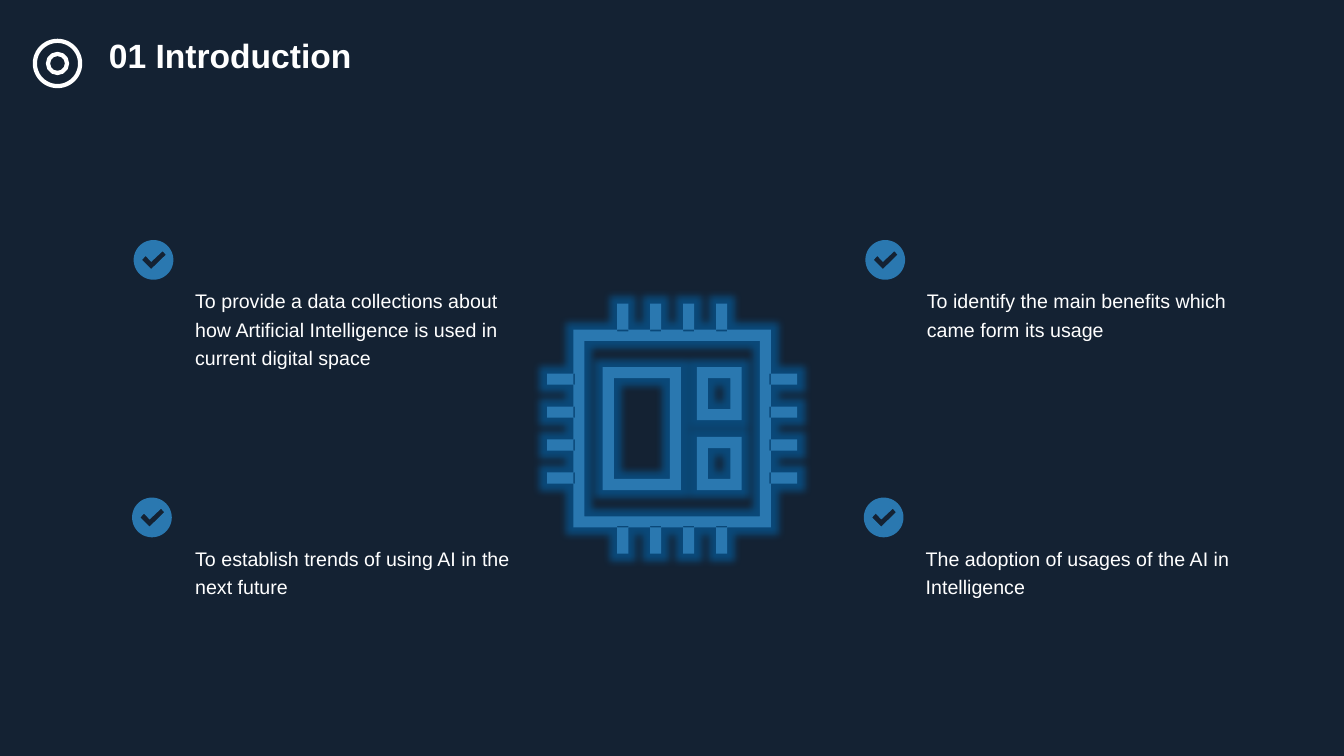
from dataclasses import dataclass
from math import cos, pi, sin

from lxml import etree
from pptx import Presentation
from pptx.dml.color import RGBColor
from pptx.enum import shapes, text
from pptx.oxml import ns
from pptx.util import Cm, Pt


@dataclass(frozen=True)
class Theme:
    background: RGBColor = RGBColor(0x14, 0x22, 0x33)
    accent: RGBColor = RGBColor(0x2A, 0x78, 0xB0)
    ink: RGBColor = RGBColor(0xFF, 0xFF, 0xFF)
    glow: str = "0070C0"
    glow_alpha: int = 50
    font: str = "Arial"
    title_size: int = 24
    body_size: int = 14
    spacing: float = 1.2


THEME = Theme()
TITLE = "01 Introduction"
TITLE_BOX = (2.49, 0.56, 15.19, 1.47)
RINGS = [(1.45, 1.6, 1.14), (1.45, 1.6, 0.48)]

AIMS = [
    ("To provide a data collections about how Artificial Intelligence is used in current digital space",
     3.37, 4.67, 6.05, 2.41),
    ("To establish trends of using AI in the next future", 3.33, 4.67, 12.54, 1.68),
    ("To identify the main benefits which came form its usage", 21.81, 23.11, 6.05, 1.68),
    ("The adoption of usages of the AI in Intelligence", 21.77, 23.08, 12.54, 1.68),
]
AIM_WIDTH = 8.64
BADGE = 1.0
TICK = [(-0.06, 0.23), (-0.29, 0), (-0.2, -0.1), (-0.06, 0.05), (0.23, -0.22), (0.31, -0.13)]

CHIP_CENTER = (16.94, 10.8)
CHIP_FRAMES = [
    (-2.49, -2.49, 4.98, 4.98),
    (-1.75, -1.55, 1.97, 3.1),
    (0.62, -1.55, 1.13, 1.34),
    (0.62, 0.21, 1.13, 1.34),
]
STROKE = 0.28
PIN_COUNT, PIN_PITCH, PIN_LENGTH, PIN_REACH = 4, 0.83, 0.7, 3.15


def rectangle(x, y, w, h):
    return [(x, y), (x + w, y), (x + w, y + h), (x, y + h)]


def circle(radius, steps=72):
    return [(radius * cos(2 * pi * i / steps), radius * sin(2 * pi * i / steps)) for i in range(steps)]


def chip_outlines():
    outlines = []
    for x, y, w, h in CHIP_FRAMES:
        outlines.append(rectangle(x, y, w, h))
        outlines.append(rectangle(x + STROKE, y + STROKE, w - 2 * STROKE, h - 2 * STROKE))
    for i in range(PIN_COUNT):
        across = (i - (PIN_COUNT - 1) / 2) * PIN_PITCH - STROKE / 2
        for along in (-PIN_REACH, PIN_REACH - PIN_LENGTH):
            outlines.append(rectangle(across, along, STROKE, PIN_LENGTH))
            outlines.append(rectangle(along, across, PIN_LENGTH, STROKE))
    return outlines


def add_outlines(slide, center, outlines):
    cx, cy = center
    builder = None
    for outline in outlines:
        points = [(Cm(cx + x), Cm(cy + y)) for x, y in outline]
        if builder is None:
            builder = slide.shapes.build_freeform(*points[0])
        else:
            builder.move_to(*points[0])
        builder.add_line_segments(points[1:], close=True)
    sp = builder.convert_to_shape()
    sp.shadow.inherit = False
    sp.fill.solid()
    sp.fill.fore_color.rgb = THEME.accent
    sp.line.fill.background()
    return sp


def add_glow(sp, radius):
    effects = sp.element.spPr.find(ns.qn("a:effectLst"))
    glow = etree.SubElement(effects, ns.qn("a:glow"), rad=str(radius))
    color = etree.SubElement(glow, ns.qn("a:srgbClr"), val=THEME.glow)
    etree.SubElement(color, ns.qn("a:alpha"), val=str(THEME.glow_alpha * 1000))


def write(sp, words, size, bold=False):
    tf = sp.text_frame
    tf.text = words
    tf.word_wrap = True
    tf.auto_size = text.MSO_AUTO_SIZE.NONE
    tf.vertical_anchor = text.MSO_ANCHOR.TOP
    p = tf.paragraphs[0]
    p.alignment = text.PP_ALIGN.LEFT
    p.line_spacing = THEME.spacing
    p.font.name = THEME.font
    p.font.size = Pt(size)
    p.font.bold = bold
    p.font.color.rgb = THEME.ink


def add_title(slide):
    title = slide.shapes.title
    title.left, title.top, title.width, title.height = map(Cm, TITLE_BOX)
    write(title, TITLE, THEME.title_size, bold=True)
    for cx, cy, size in RINGS:
        ring = slide.shapes.add_shape(
            shapes.MSO_SHAPE.OVAL, Cm(cx - size / 2), Cm(cy - size / 2), Cm(size), Cm(size))
        ring.shadow.inherit = False
        ring.fill.background()
        ring.line.color.rgb = THEME.ink
        ring.line.width = Pt(3)


def add_aim(slide, words, badge_left, text_left, top, height):
    center = (badge_left + BADGE / 2, top + BADGE / 2)
    add_outlines(slide, center, [circle(BADGE / 2), TICK])
    box = slide.shapes.add_textbox(Cm(text_left), Cm(top + BADGE), Cm(AIM_WIDTH), Cm(height))
    write(box, words, THEME.body_size)


def main():
    prs = Presentation()
    prs.slide_width, prs.slide_height = Cm(33.87), Cm(19.05)
    slide = prs.slides.add_slide(prs.slide_layouts.get_by_name("Title Only"))
    slide.background.fill.solid()
    slide.background.fill.fore_color.rgb = THEME.background
    add_title(slide)
    for aim in AIMS:
        add_aim(slide, *aim)
    chip = add_outlines(slide, CHIP_CENTER, chip_outlines())
    add_glow(chip, Pt(11))
    prs.save("out.pptx")


if __name__ == "__main__":
    main()
